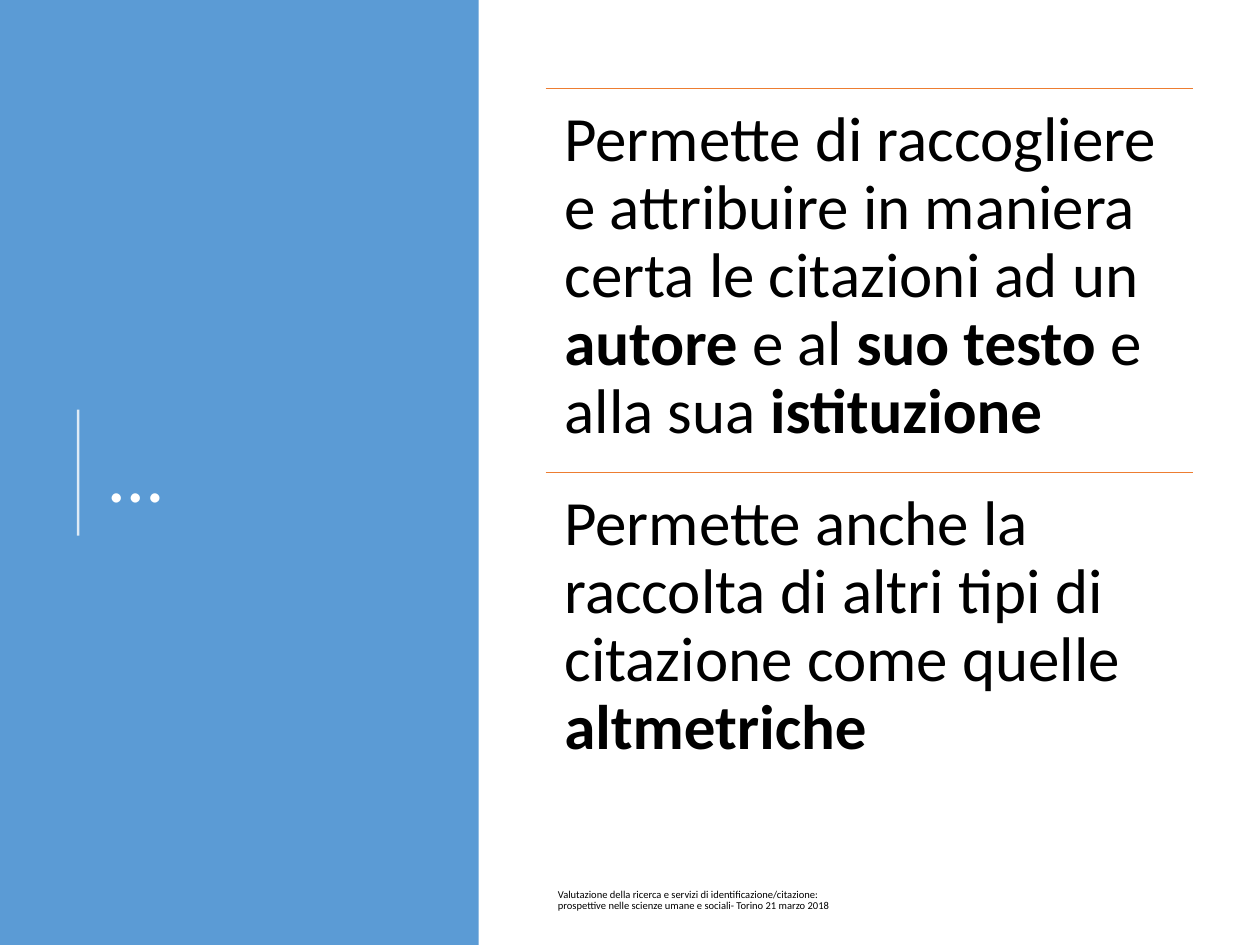
from pptx import Presentation
from pptx.dml.color import RGBColor
from pptx.enum.shapes import MSO_CONNECTOR, MSO_SHAPE
from pptx.enum.text import MSO_ANCHOR
from pptx.oxml.ns import qn
from pptx.util import Inches, Pt
from lxml import etree


def paint(target, color):
    if hasattr(target, "solid"):
        target.solid()
        target = target.fore_color
    target.rgb = RGBColor.from_string(color)


def add_text(x, y, w, h, parts, size, color, inset, anchor, after=0):
    tf = s.shapes.add_textbox(Inches(x), Inches(y), Inches(w), Inches(h)).text_frame
    tf.word_wrap = True
    tf.vertical_anchor = anchor
    tf.margin_left = tf.margin_right = Inches(inset)
    tf.margin_top = tf.margin_bottom = Inches(min(inset, 0.15) if inset > 0.1 else 0.05)
    p = tf.paragraphs[0]
    p.line_spacing = 0.9
    p.space_after = Pt(after)
    for text, bold in parts:
        r = p.add_run()
        r.text = text
        r.font.name = "Calibri"
        r.font.size = Pt(size)
        r.font.bold = bold
        paint(r.font.color, color)


prs = Presentation()
prs.slide_width = Inches(10)
prs.slide_height = Inches(7.5)
s = prs.slides.add_slide(prs.slide_layouts[6])

panel = s.shapes.add_shape(MSO_SHAPE.RECTANGLE, 0, 0, Inches(3.8), Inches(7.5))
panel.shadow.inherit = False
paint(panel.fill, "5B9BD5")
panel.line.fill.background()

rules = [
    (0.62, 4.25, 0.62, 3.25, "FFFFFF", 1.5, 80),
    (4.33, 0.7, 9.47, 0.7, "ED7D31", 0.5, 100),
    (4.33, 3.75, 9.47, 3.75, "ED7D31", 0.5, 100),
]
for x1, y1, x2, y2, color, width, opacity in rules:
    c = s.shapes.add_connector(
        MSO_CONNECTOR.STRAIGHT, Inches(x1), Inches(y1), Inches(x2), Inches(y2)
    )
    paint(c.line.fill, color)
    c.line.width = Pt(width)
    spPr = c._element.spPr
    if opacity < 100:
        clr = spPr.find(".//" + qn("a:srgbClr"))
        etree.SubElement(clr, qn("a:alpha")).set("val", str(opacity * 1000))
    etree.SubElement(spPr, qn("a:effectLst"))

add_text(0.77, 0.78, 2.76, 6.02, [("…", False)], 44, "FFFFFF", 0.1, MSO_ANCHOR.MIDDLE)

points = [
    [
        ("Permette di raccogliere e attribuire in maniera certa le citazioni ad un ", False),
        ("autore ", True),
        ("e al ", False),
        ("suo testo ", True),
        ("e alla sua ", False),
        ("istituzione", True),
    ],
    [
        ("Permette anche la raccolta di altri tipi di citazione come quelle ", False),
        ("altmetriche", True),
    ],
]
for i, parts in enumerate(points):
    add_text(4.33, 0.7 + i * 3.05, 5.14, 3.05, parts, 36, "000000", 0.15, MSO_ANCHOR.TOP, 12.6)

footer = (
    "Valutazione della ricerca e servizi di identificazione/citazione: "
    "prospettive nelle scienze umane e sociali- Torino 21 marzo 2018"
)
add_text(4.33, 6.95, 2.36, 0.4, [(footer, False)], 6, "000000", 0.1, MSO_ANCHOR.MIDDLE, 6)

prs.save("out.pptx")
